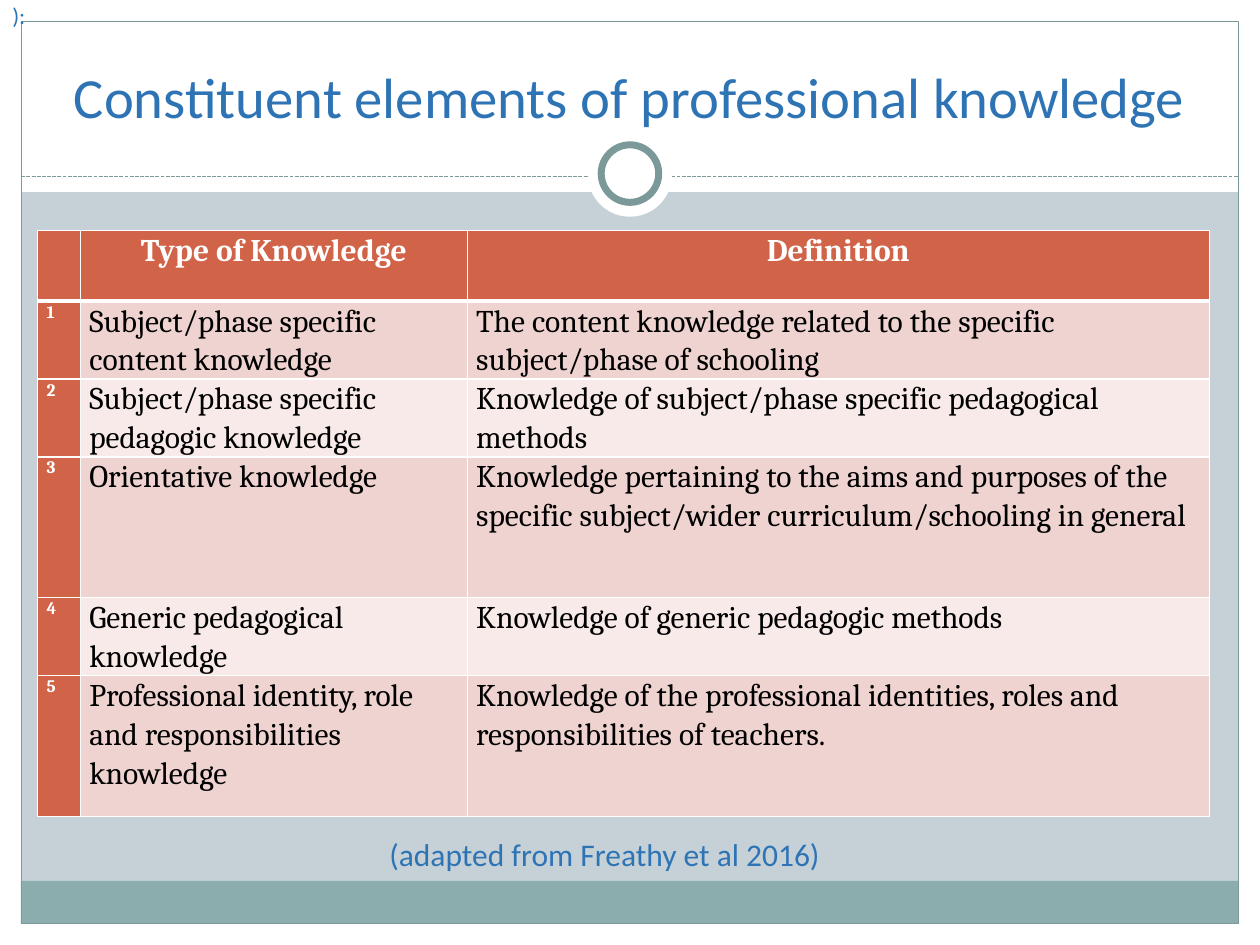
from pptx import Presentation, util as u
from pptx.dml.color import RGBColor
from pptx.enum import dml, shapes, text
from pptx.oxml import parse_xml
from pptx.oxml.ns import nsdecls
from lxml import etree

WHITE = RGBColor(0xFF, 0xFF, 0xFF)
BLACK = RGBColor(0, 0, 0)
BACKGROUND = RGBColor(0xC5, 0xD1, 0xD7)
BAND = RGBColor(0x8C, 0xAD, 0xAE)
FRAME = RGBColor(0x7C, 0x99, 0x9A)
BLUE = RGBColor(0x2E, 0x74, 0xB5)
RUST = RGBColor(0xD1, 0x63, 0x49)
PINK = RGBColor(0xEE, 0xD3, 0xD0)
PALE_PINK = RGBColor(0xF7, 0xEA, 0xE9)


def write(frame, words, color, alignment=text.PP_ALIGN.LEFT, **font_format):
    paragraph = frame.paragraphs[0]
    paragraph.alignment = alignment
    run = paragraph.add_run()
    run.text = words
    run.font.color.rgb = color
    for name, value in font_format.items():
        setattr(run.font, name, value)
    return paragraph


def set_borders(cell, bottom_width):
    widths = {"lnL": 1, "lnR": 1, "lnT": 1, "lnB": bottom_width}
    for tag, width in widths.items():
        cell._tc.get_or_add_tcPr().append(parse_xml(
            f'<a:{tag} {nsdecls("a")} w="{u.Pt(width)}"><a:solidFill>'
            f'<a:srgbClr val="{WHITE}"/></a:solidFill></a:{tag}>'))


presentation = Presentation()
presentation.slide_width, presentation.slide_height = u.Cm(25.4), u.Cm(19.05)
slide = presentation.slides.add_slide(presentation.slide_layouts[5])
slide.background.fill.solid()
slide.background.fill.fore_color.rgb = BACKGROUND

RECTANGLE, OVAL = shapes.MSO_SHAPE.RECTANGLE, shapes.MSO_SHAPE.OVAL
decorations = [
    (RECTANGLE, 0, 18.62, 25.4, 0.43, WHITE, None),
    (RECTANGLE, 0, 0, 25.4, 3.87, WHITE, None),
    (RECTANGLE, 0, 0, 0.43, 19.05, WHITE, None),
    (RECTANGLE, 24.97, 0, 0.43, 19.05, WHITE, None),
    (RECTANGLE, 0.42, 17.76, 24.54, 0.86, BAND, None),
    (RECTANGLE, 0.43, 0.43, 24.54, 18.19, None, 0.75),
    (OVAL, 11.85, 2.67, 1.7, 1.7, WHITE, None),
    (OVAL, 12.12, 2.92, 1.16, 1.16, WHITE, 4),
]
rule = slide.shapes.add_connector(
    shapes.MSO_CONNECTOR.STRAIGHT, u.Cm(0.43), u.Cm(3.56), u.Cm(24.97), u.Cm(3.56))
rule.line.color.rgb = FRAME
rule.line.width = u.Pt(0.75)
rule.line.dash_style = dml.MSO_LINE.SQUARE_DOT
etree.SubElement(rule._element.spPr, "{http://schemas.openxmlformats.org/drawingml/2006/main}effectLst")

for preset, left, top, width, height, fill, line_width in decorations:
    if preset == OVAL and fill == WHITE and line_width is None:
        slide.shapes._spTree.append(rule._element)
    shape = slide.shapes.add_shape(preset, u.Cm(left), u.Cm(top), u.Cm(width), u.Cm(height))
    shape.shadow.inherit = False
    if fill is None:
        shape.fill.background()
    else:
        shape.fill.solid()
        shape.fill.fore_color.rgb = fill
    if line_width is None:
        shape.line.fill.background()
    else:
        shape.line.color.rgb = FRAME
        shape.line.width = u.Pt(line_width)

title = slide.shapes.title
slide.shapes._spTree.append(title._element)
title_place = {"left": 0.84, "top": 0.64, "width": 23.7, "height": 2.1}
for name, value in title_place.items():
    setattr(title, name, u.Cm(value))
title.text_frame.vertical_anchor = text.MSO_ANCHOR.BOTTOM
title.text_frame.auto_size = text.MSO_AUTO_SIZE.NONE
write(title.text_frame, "Constituent elements of professional knowledge", BLUE,
      text.PP_ALIGN.CENTER, name="Calibri", size=u.Pt(32.4))

rows = [
    ("", "Type of Knowledge", "Definition"),
    ("1", "Subject/phase specific content knowledge",
     "The content knowledge related to the specific subject/phase of schooling"),
    ("2", "Subject/phase specific pedagogic knowledge",
     "Knowledge of subject/phase specific pedagogical methods"),
    ("3", "Orientative knowledge",
     "Knowledge pertaining to the aims and purposes of the specific "
     "subject/wider curriculum/schooling in general"),
    ("4", "Generic pedagogical knowledge", "Knowledge of generic pedagogic methods"),
    ("5", "Professional identity, role and responsibilities knowledge",
     "Knowledge of the professional identities, roles and responsibilities of teachers."),
]
column_widths = [0.86, 7.8, 14.96]
row_heights = [1.42, 1.42, 1.42, 2.84, 1.42, 2.84]
table = slide.shapes.add_table(
    len(rows), len(column_widths), u.Cm(0.76), u.Cm(4.65),
    u.Cm(sum(column_widths)), u.Cm(sum(row_heights))).table
for column, width in zip(table.columns, column_widths):
    column.width = u.Cm(width)
for row, height in zip(table.rows, row_heights):
    row.height = u.Cm(height)

cell_margins = {"margin_left": 0.18, "margin_right": 0.18, "margin_top": 0, "margin_bottom": 0}
for row_index, row in enumerate(rows):
    for column_index, words in enumerate(row):
        cell = table.cell(row_index, column_index)
        header = row_index == 0
        accent = header or column_index == 0
        set_borders(cell, 3 if header else 1)
        cell.fill.solid()
        cell.fill.fore_color.rgb = RUST if accent else PINK if row_index % 2 else PALE_PINK
        for name, value in cell_margins.items():
            setattr(cell, name, u.Cm(value))
        if words:
            paragraph = write(
                cell.text_frame, words, WHITE if accent else BLACK,
                text.PP_ALIGN.CENTER if header else text.PP_ALIGN.LEFT,
                name="Cambria", bold=accent, size=u.Pt(18 if header or column_index else 10))
            paragraph.line_spacing = 1.07

notes = [
    ("):", 0, -0.05, 0.76, 1.4, 13, 0.08),
    ("(adapted from Freathy et al 2016)", 7.6, 16.71, 9.19, 1.02, 18, 0.13),
]
for words, left, top, width, height, size, margin_top in notes:
    box = slide.shapes.add_textbox(u.Cm(left), u.Cm(top), u.Cm(width), u.Cm(height))
    box.text_frame.word_wrap = False
    box.text_frame.margin_top = u.Cm(margin_top)
    write(box.text_frame, words, BLUE, name="Calibri", size=u.Pt(size))

presentation.save("out.pptx")
